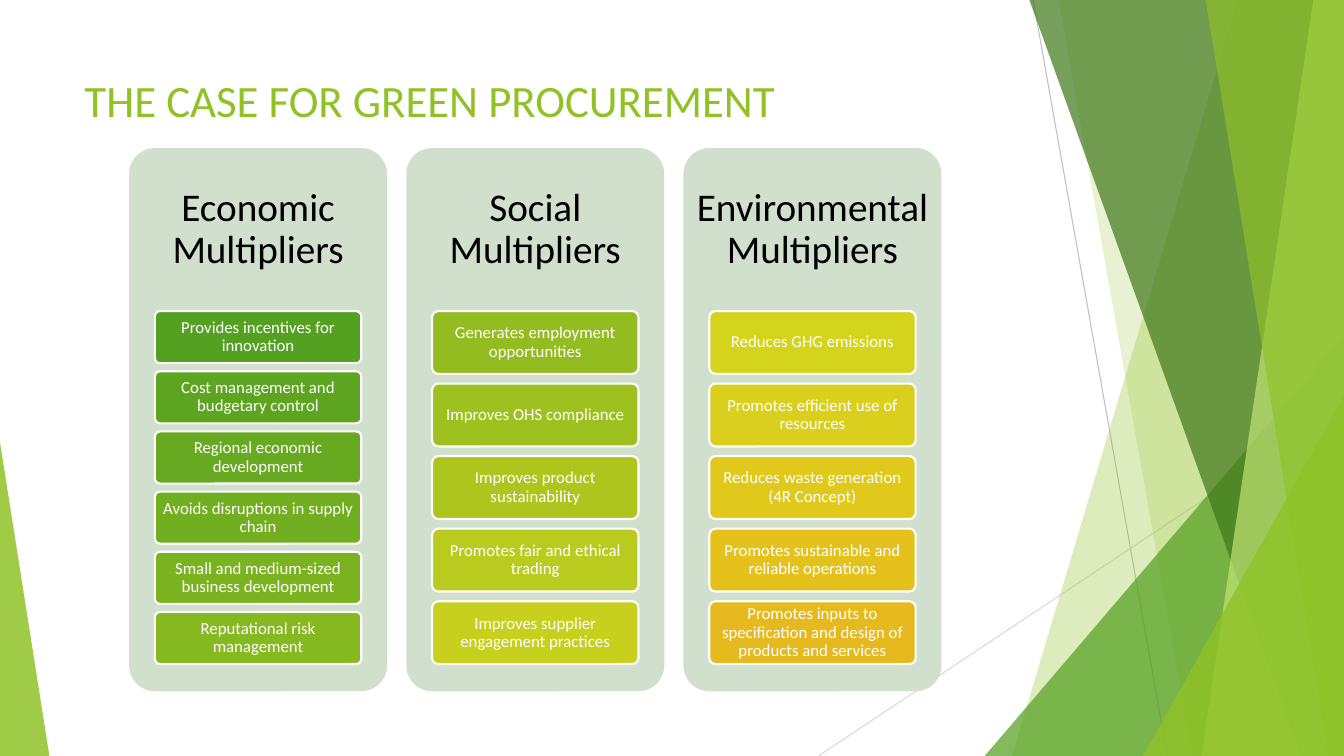
from pptx import Presentation
from pptx.dml.color import RGBColor
from pptx.enum.shapes import MSO_CONNECTOR as Link, MSO_SHAPE as Kind
from pptx.enum.text import MSO_ANCHOR as Anchor, PP_ALIGN as Align
from pptx.oxml.ns import qn
from pptx.util import Pt
from lxml.etree import SubElement

WIDE, HIGH, TOP = 960, 540, -0.6
FONT = "Calibri"
HUES = {
    "white": "FFFFFF", "black": "000000", "panel": "D1DFCD",
    "lime": "90C226", "leaf": "54A021", "moss": "3F7819", "pale": "C0E474",
    "gray": "BFBFBF", "mist": "D9D9D9",
}
TITLE = "THE CASE FOR GREEN PROCUREMENT"
COLUMNS = [
    ("Economic Multipliers", [
        ("Provides incentives for innovation", "54A021"),
        ("Cost management and budgetary control", "5DA521"),
        ("Regional economic development", "67A921"),
        ("Avoids disruptions in supply chain", "71AE20"),
        ("Small and medium-sized business development", "7BB320"),
        ("Reputational risk management", "86B820"),
    ]),
    ("Social Multipliers", [
        ("Generates employment opportunities", "92BC1F"),
        ("Improves OHS compliance", "9FC11F"),
        ("Improves product sustainability", "ACC61E"),
        ("Promotes fair and ethical trading", "B9CB1E"),
        ("Improves supplier engagement practices", "C7D01D"),
    ]),
    ("Environmental Multipliers", [
        ("Reduces GHG emissions", "D5D41D"),
        ("Promotes efficient use of resources", "DACF1C"),
        ("Reduces waste generation (4R Concept)", "E0C91B"),
        ("Promotes sustainable and reliable operations", "E4C21B"),
        ("Promotes inputs to specification and design of products and services", "E6B91E"),
    ]),
]
RAYS = [
    (738, 0, 833.8, HIGH, "gray"),
    (WIDE, 290.2, 584.6, HIGH, "mist"),
]
FACETS = [
    ("band", (884.2, 722.9), "lime", 30),
    ("band", (756, 851.8), "lime", 20),
    ("peak", (703.4, 239.8, 256.6, 1), "leaf", 72),
    ("band", (735.1, 929.5), "moss", 70),
    ("band", (938.2, 858.2), "pale", 70),
    ("band", (861.1, 949), "lime", 65),
    ("peak", (816.5, 283, 143.5, 1), "lime", 80),
    ("peak", (0, 316, 35.3, 0), "lime", 85),
]

deck = Presentation()
deck.slide_width, deck.slide_height = Pt(WIDE), Pt(HIGH)
slide = deck.slides.add_slide(deck.slide_layouts[6])
shapes = slide.shapes


def paint(shape, hue, alpha=100):
    shape.shadow.inherit = False
    shape.fill.solid()
    shape.fill.fore_color.rgb = RGBColor.from_string(hue)
    shape.line.fill.background()
    if alpha < 100:
        tint = shape.fill._xPr.find(qn("a:solidFill"))[0]
        SubElement(tint, qn("a:alpha")).set("val", str(alpha * 1000))


def ray(x1, y1, x2, y2, hue):
    line = shapes.add_connector(Link.STRAIGHT, Pt(x1), Pt(y1), Pt(x2), Pt(y2))
    line.line.color.rgb = RGBColor.from_string(HUES[hue])
    line.line.width = Pt(0.75)
    SubElement(line._element.spPr, qn("a:effectLst"))


def band(head, foot):
    pen = shapes.build_freeform(Pt(head), Pt(TOP), scale=1.0)
    ends = [(WIDE, TOP), (WIDE, HIGH), (foot, HIGH)]
    pen.add_line_segments([(Pt(x), Pt(y)) for x, y in ends], close=True)
    return pen.convert_to_shape()


def peak(left, top, width, tip):
    shape = shapes.add_shape(
        Kind.ISOSCELES_TRIANGLE, Pt(left), Pt(top), Pt(width), Pt(HIGH - top))
    shape.adjustments[0] = tip
    return shape


def card(left, top, width, height, hue):
    shape = shapes.add_shape(
        Kind.ROUNDED_RECTANGLE, Pt(left), Pt(top), Pt(width), Pt(height))
    shape.adjustments[0] = 0.1
    paint(shape, hue)
    return shape


def write(shape, text, size, hue, inset, align=Align.CENTER, anchor=Anchor.MIDDLE):
    frame = shape.text_frame
    frame.word_wrap = True
    frame.vertical_anchor = anchor
    frame.margin_left = frame.margin_right = Pt(inset)
    frame.margin_top = frame.margin_bottom = Pt(min(inset, 3.6))
    para = frame.paragraphs[0]
    para.text = text
    para.alignment = align
    para.font.name, para.font.size = FONT, Pt(size)
    para.font.color.rgb = RGBColor.from_string(HUES[hue])
    return para


for spot in RAYS:
    ray(*spot)
draw = {"band": band, "peak": peak}
for form, spot, hue, alpha in FACETS:
    paint(draw[form](*spot), HUES[hue], alpha)

title = shapes.add_textbox(Pt(53.3), Pt(48.2), Pt(676.8), Pt(103.7))
write(title, TITLE, 32, "lime", 7.2, Align.LEFT, Anchor.TOP)

LEFT, CREST, WIDTH, HEIGHT, PITCH = 92.2, 105.8, 184.3, 388, 198
GAP = 2 / 13
for col, (head, items) in enumerate(COLUMNS):
    x = LEFT + col * PITCH
    card(x, CREST, WIDTH, HEIGHT, HUES["panel"])
    label = shapes.add_textbox(Pt(x), Pt(CREST), Pt(WIDTH), Pt(0.3 * HEIGHT))
    write(label, head, 28, "black", 8.4).line_spacing = 0.9
    count = len(items)
    tall = 0.65 * HEIGHT / (count + (count - 1) * GAP)
    for row, (text, hue) in enumerate(items):
        y = CREST + 0.3 * HEIGHT + row * tall * (1 + GAP)
        box = card(x + 0.1 * WIDTH, y, 0.8 * WIDTH, tall, hue)
        box.line.color.rgb = RGBColor.from_string(HUES["white"])
        box.line.width = Pt(1.5)
        write(box, text, 12, "white", 2.4).line_spacing = 0.9

deck.save("out.pptx")
